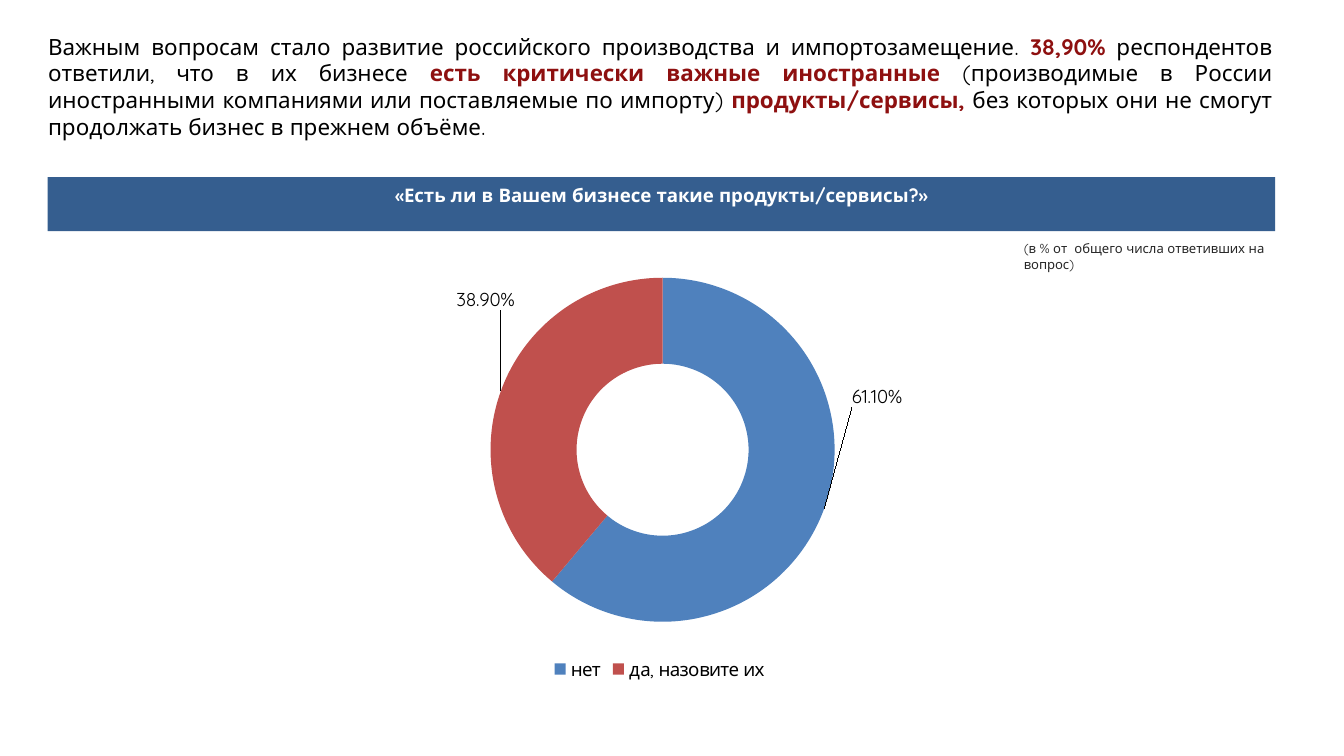
from dataclasses import dataclass

from lxml import etree
from pptx import Presentation
from pptx.chart.data import CategoryChartData
from pptx.dml.color import RGBColor
from pptx.enum.chart import XL_CHART_TYPE as ChartType, XL_LEGEND_POSITION as LegendPosition
from pptx.enum.shapes import MSO_SHAPE as ShapeKind
from pptx.enum.text import MSO_ANCHOR as Anchor, PP_ALIGN as Align
from pptx.oxml.ns import qn
from pptx.util import Cm, Pt


@dataclass(frozen=True)
class Theme:
    font: str = "Quicksand"
    chart_font: str = "Calibri"
    text: str = "000000"
    accent: str = "8E1010"
    banner: str = "355E8F"
    banner_text: str = "FFFFFF"
    note: str = "262626"
    slices: tuple = ("4F81BD", "C0504D")
    body_size: float = 12
    label_size: float = 10
    note_size: float = 7


THEME = Theme()


def set_values(target, values):
    for name, value in values.items():
        setattr(target, name, value)


def style_font(font, size, color, bold=False, name=THEME.font):
    set_values(font, {"name": name, "size": Pt(size), "bold": bold})
    font.color.rgb = RGBColor.from_string(color)


def write(shape, runs, size, frame_format, paragraph_format):
    """Fill a shape with one paragraph of (text, colour, bold) runs."""
    set_values(shape.text_frame, {"word_wrap": True, **frame_format})
    paragraph = shape.text_frame.paragraphs[0]
    set_values(paragraph, paragraph_format)
    for text, color, bold in runs:
        run = paragraph.add_run()
        run.text = text
        style_font(run.font, size, color, bold)


def add_intro(slide, box):
    # A no-break space keeps "иностранными компаниями" on one line
    plain, strong = (THEME.text, False), (THEME.accent, True)
    runs = [
        ("Важным вопросам стало развитие российского производства и импортозамещение. ", *plain),
        ("38,90%", *strong),
        (" респондентов ответили, что в их бизнесе ", *plain),
        ("есть критически важные иностранные", *strong),
        (" (производимые в России иностранными компаниями или поставляемые по импорту) ", *plain),
        ("продукты/сервисы, ", *strong),
        ("без которых они не смогут продолжать бизнес в прежнем объёме.", *plain),
    ]
    write(slide.shapes.add_textbox(*box), runs, THEME.body_size,
          {"vertical_anchor": Anchor.MIDDLE},
          {"alignment": Align.JUSTIFY, "space_before": Pt(2.4)})


def add_banner(slide, box):
    banner = slide.shapes.add_shape(ShapeKind.RECTANGLE, *box)
    banner.shadow.inherit = False
    banner.fill.solid()
    banner.fill.fore_color.rgb = RGBColor.from_string(THEME.banner)
    banner.line.fill.background()
    write(banner, [("«Есть ли в Вашем бизнесе такие продукты/сервисы?»", THEME.banner_text, True)],
          THEME.label_size, {"vertical_anchor": Anchor.TOP},
          {"alignment": Align.CENTER, "space_before": Pt(2)})


def add_note(slide, box):
    write(slide.shapes.add_textbox(*box),
          [("(в % от  общего числа ответивших на вопрос)", THEME.note, False)],
          THEME.note_size, {"vertical_anchor": Anchor.TOP}, {"alignment": Align.LEFT})


def manual_layout(values):
    """Chart layout element; values are shares of the chart's size."""
    layout = etree.Element(qn("c:layout"))
    manual = etree.SubElement(layout, qn("c:manualLayout"))
    for tag, value in values.items():
        etree.SubElement(manual, qn(f"c:{tag}")).set("val", str(value))
    return layout


def add_doughnut(slide, box):
    data = CategoryChartData(number_format="0.00%")
    data.categories = ["нет", "да, назовите их"]
    data.add_series("Series 1", (0.611, 0.389))
    chart = slide.shapes.add_chart(ChartType.DOUGHNUT, *box, data).chart
    style_font(chart.font, THEME.label_size, THEME.text, name=THEME.chart_font)
    set_values(chart, {"has_title": False, "has_legend": True})
    set_values(chart.legend, {"position": LegendPosition.BOTTOM, "include_in_layout": False})
    style_font(chart.legend.font, THEME.label_size, THEME.text)

    # Ring position
    plot_area = chart.plots[0]._element.getparent()
    for old_layout in plot_area.findall(qn("c:layout")):
        plot_area.remove(old_layout)
    plot_area.insert(0, manual_layout({
        "layoutTarget": "inner", "xMode": "edge", "yMode": "edge",
        "x": 0.225, "y": 0.04, "w": 0.56, "h": 0.81}))

    # Slices, with labels moved outside the ring on leader lines
    plot = chart.plots[0]
    plot.vary_by_categories = True
    series = plot.series[0]
    set_values(series.data_labels, {
        "show_value": True, "number_format": "0.00%", "number_format_is_linked": False})
    style_font(series.data_labels.font, THEME.label_size, THEME.text)
    for index, color in enumerate(THEME.slices):
        point = series.points[index]
        point.format.fill.solid()
        point.format.fill.fore_color.rgb = RGBColor.from_string(color)
        style_font(point.data_label.font, THEME.label_size, THEME.text)
    label_offsets = ((0.15, -0.23), (-0.09, -0.25))
    labels = series._element.iter(qn("c:dLbl"))
    for label, (x, y) in zip(list(labels), label_offsets):
        label.insert(1, manual_layout({"x": x, "y": y}))
        number_format = etree.Element(qn("c:numFmt"), formatCode="0.00%", sourceLinked="0")
        label.insert(2, number_format)


def cm_box(*lengths):
    return tuple(Cm(length) for length in lengths)


def main():
    presentation = Presentation()
    set_values(presentation, {"slide_width": Cm(25.4), "slide_height": Cm(14.29)})
    slide = presentation.slides.add_slide(presentation.slide_layouts[6])
    add_intro(slide, cm_box(0.66, 0.34, 23.64, 2.59))
    add_banner(slide, cm_box(0.9, 3.35, 23.2, 1.02))
    add_note(slide, cm_box(19.1, 4.43, 5.8, 0.86))
    add_doughnut(slide, cm_box(6.6, 4.93, 11.73, 8.03))
    presentation.save("out.pptx")


if __name__ == "__main__":
    main()
